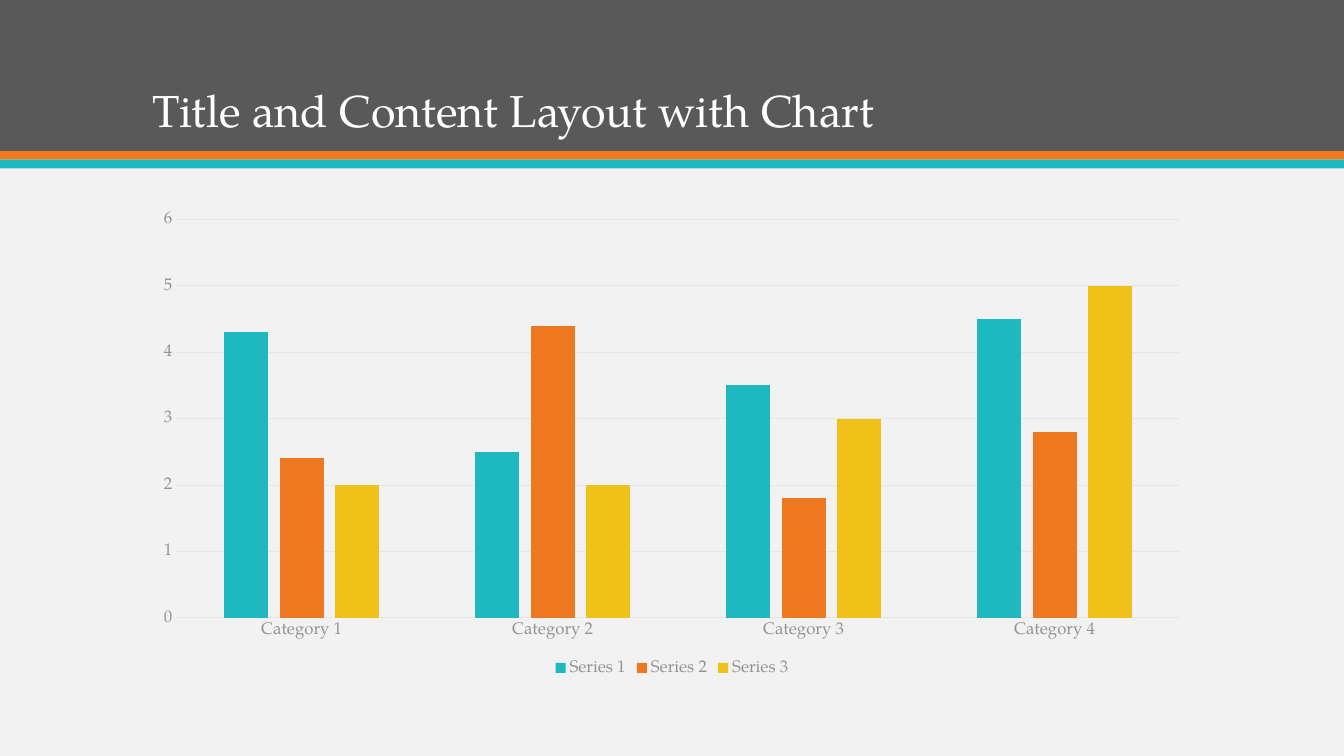
import pptx
import pptx.chart.data
import pptx.dml.color
import pptx.enum.chart
import pptx.enum.text
import pptx.util

RGBColor = pptx.dml.color.RGBColor
BACKGROUND = RGBColor(0xF2, 0xF2, 0xF2)
DARK_GRAY = RGBColor(0x59, 0x59, 0x59)
LABEL_GRAY = RGBColor(0x93, 0x93, 0x93)
GRID_GRAY = RGBColor(0xE6, 0xE6, 0xE6)
WHITE = RGBColor(0xFF, 0xFF, 0xFF)
TEAL = RGBColor(0x1E, 0xB8, 0xC1)
ORANGE = RGBColor(0xEF, 0x79, 0x20)
YELLOW = RGBColor(0xEF, 0xC1, 0x19)
TYPEFACE = "TeX Gyre Pagella"


def format_font(font, size, color):
    font.name = TYPEFACE
    font.size = pptx.util.Pt(size)
    font.color.rgb = color


def write_text(frame, text, *, size, color, anchor, align, line_spacing):
    frame.word_wrap = True
    frame.auto_size = pptx.enum.text.MSO_AUTO_SIZE.NONE
    frame.vertical_anchor = anchor
    paragraph = frame.paragraphs[0]
    paragraph.alignment = align
    paragraph.line_spacing = line_spacing
    run = paragraph.add_run()
    run.text = text
    format_font(run.font, size, color)


presentation = pptx.Presentation()
presentation.slide_width = pptx.util.Inches(13.33)
presentation.slide_height = pptx.util.Inches(7.5)
slide_width = presentation.slide_width
slide_height = presentation.slide_height
content_width = pptx.util.Inches(10.5)
content_left = (slide_width - content_width) // 2

slide = presentation.slides.add_slide(presentation.slide_layouts[5])
slide.background.fill.solid()
slide.background.fill.fore_color.rgb = BACKGROUND

# Header and its two stripes, stacked from the top
header_height = slide_height // 5
stripe_height = pptx.util.Inches(0.085)
band_top = 0
for band_height, band_color in (
    (header_height, DARK_GRAY),
    (stripe_height, ORANGE),
    (stripe_height, TEAL),
):
    band = slide.shapes.add_shape(
        pptx.enum.shapes.MSO_SHAPE.RECTANGLE, 0, band_top, slide_width, band_height
    )
    band.shadow.inherit = False
    band.fill.solid()
    band.fill.fore_color.rgb = band_color
    band.line.fill.background()
    band_top += band_height

# Title, brought in front of the header
title = slide.shapes.title
title.element.getparent().append(title.element)
title.left, title.top = content_left, pptx.util.Inches(0.28)
title.width, title.height = content_width, pptx.util.Inches(1.13)
write_text(
    title.text_frame,
    "Title and Content Layout with Chart",
    size=32,
    color=WHITE,
    anchor=pptx.enum.text.MSO_ANCHOR.BOTTOM,
    align=pptx.enum.text.PP_ALIGN.LEFT,
    line_spacing=0.9,
)

# Chart
series_table = (
    ("Series 1", (4.3, 2.5, 3.5, 4.5), TEAL),
    ("Series 2", (2.4, 4.4, 1.8, 2.8), ORANGE),
    ("Series 3", (2, 2, 3, 5), YELLOW),
)
chart_data = pptx.chart.data.CategoryChartData()
chart_data.categories = [f"Category {number}" for number in range(1, 5)]
for series_name, values, _ in series_table:
    chart_data.add_series(series_name, values)

chart = slide.shapes.add_chart(
    pptx.enum.chart.XL_CHART_TYPE.COLUMN_CLUSTERED,
    content_left,
    pptx.util.Inches(2),
    content_width,
    pptx.util.Inches(4.75),
    chart_data,
).chart
format_font(chart.font, 10, DARK_GRAY)
chart.has_title = False
chart.has_legend = True
chart.legend.position = pptx.enum.chart.XL_LEGEND_POSITION.BOTTOM
chart.legend.include_in_layout = False
format_font(chart.legend.font, 12, LABEL_GRAY)

columns = chart.plots[0]
columns.vary_by_categories = False
columns.gap_width = 219
columns.overlap = -27
for series, (_, _, series_color) in zip(columns.series, series_table):
    series.invert_if_negative = False
    series.format.fill.solid()
    series.format.fill.fore_color.rgb = series_color

for axis in (chart.category_axis, chart.value_axis):
    axis.major_tick_mark = pptx.enum.chart.XL_TICK_MARK.NONE
    axis.minor_tick_mark = pptx.enum.chart.XL_TICK_MARK.NONE
    format_font(axis.tick_labels.font, 12, LABEL_GRAY)

value_axis = chart.value_axis
value_axis.minimum_scale = 0
value_axis.maximum_scale = 6
value_axis.major_unit = 1
value_axis.has_major_gridlines = True
value_axis.format.line.fill.background()
for rule in (chart.category_axis.format.line, value_axis.major_gridlines.format.line):
    rule.color.rgb = GRID_GRAY
    rule.width = pptx.util.Pt(0.75)

presentation.save("out.pptx")
